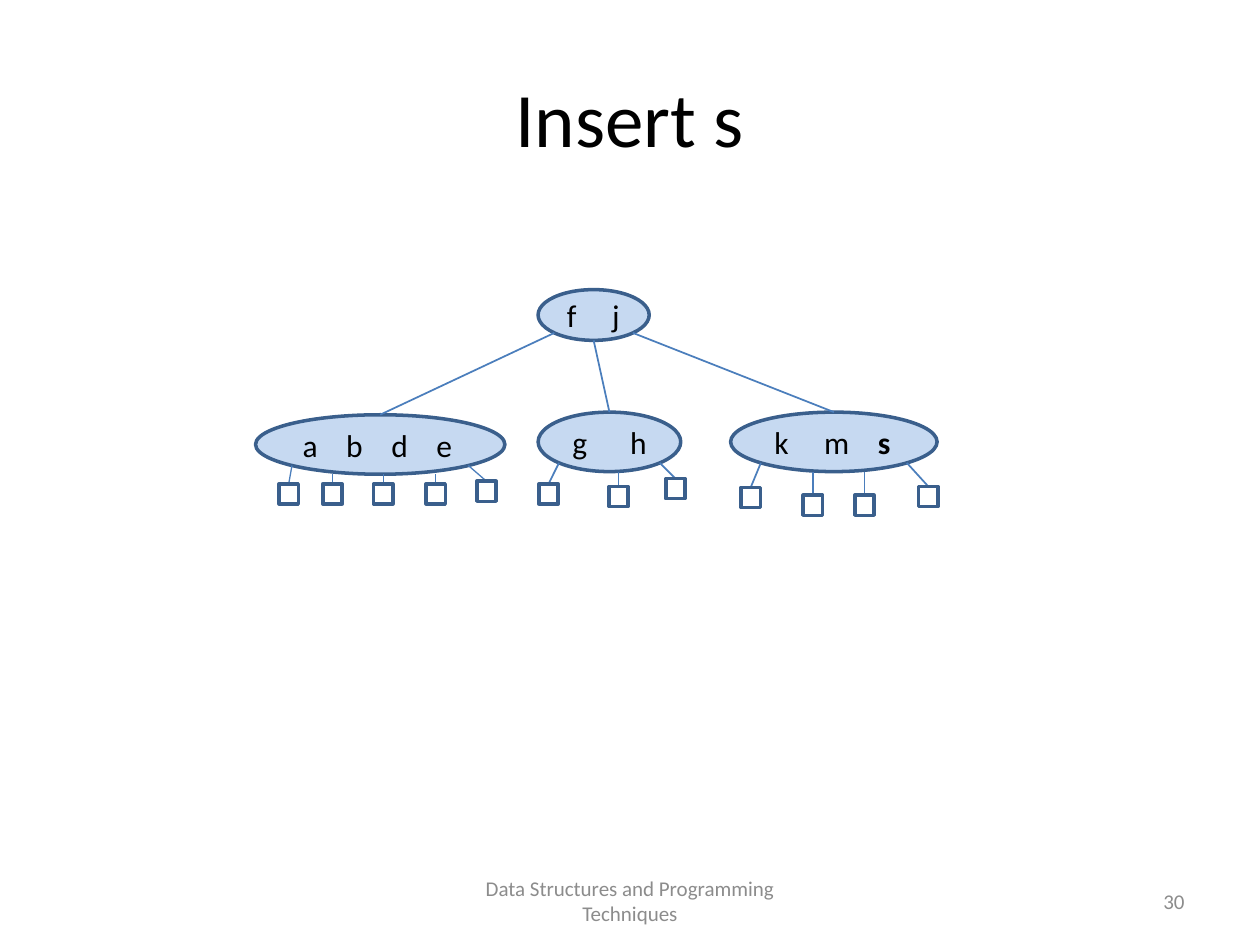
from collections import namedtuple
from dataclasses import dataclass
from math import sqrt

from lxml import etree
from pptx import Presentation
from pptx.dml.color import RGBColor
from pptx.enum.shapes import MSO_CONNECTOR, MSO_SHAPE
from pptx.enum.text import MSO_ANCHOR, PP_ALIGN
from pptx.oxml.ns import qn
from pptx.util import Pt

LEFT, CENTER, RIGHT = PP_ALIGN.LEFT, PP_ALIGN.CENTER, PP_ALIGN.RIGHT
MIDDLE = MSO_ANCHOR.MIDDLE
OVAL, SQUARE = MSO_SHAPE.OVAL, MSO_SHAPE.RECTANGLE
STRAIGHT = MSO_CONNECTOR.STRAIGHT


@dataclass(frozen=True)
class Theme:
    font: str = "Calibri"
    text: str = "000000"
    muted: str = "8C8C8C"
    node_fill: str = "C6D9F1"
    outline: str = "3A5F8C"
    branch: str = "4B7EBC"
    title_size: int = 44
    key_size: int = 18
    footer_size: int = 12
    outline_width: int = 2


THEME = Theme()
LEAF_W, LEAF_H = 11, 11.5
KEY_BOX_H = 29

# keys: (letter, left edge); leaves: (centre x, top); sizes in points
Node = namedtuple("Node", "left top width height keys leaves leaf_line")
ROOT = Node(307.5, 165.5, 63.5, 29, [("f", 324), ("j", 349.8)], [], 1)
CHILDREN = [
    Node(146, 237, 142.5, 34,
         [("a", 172.9), ("b", 197.8), ("d", 223.6), ("e", 249.4)],
         [(165, 276.5), (190, 276.5), (219, 276.5), (249, 276.5), (278, 275)], 0.75),
    Node(307.5, 235.5, 81.5, 34, [("g", 327), ("h", 360)],
         [(313.5, 276.5), (353.5, 278), (386, 273.5)], 1),
    Node(417.5, 235.5, 118, 34, [("k", 442.5), ("m", 471), ("s", 501.7)],
         [(429, 278.5), (464.5, 283), (494, 283), (530.5, 278)], 1),
]
NEW_KEY = "s"


def rgb(value):
    return RGBColor.from_string(value)


def set_font(r, size, color, bold=False):
    formats = {"name": THEME.font, "size": Pt(size), "bold": bold}
    for name, value in formats.items():
        setattr(r.font, name, value)
    r.font.color.rgb = rgb(color)


def set_frame(tf, **formats):
    for name, value in {"word_wrap": True, "vertical_anchor": MIDDLE, **formats}.items():
        setattr(tf, name, value)


def place(sp, left, top, width, height):
    for name, value in dict(left=left, top=top, width=width, height=height).items():
        setattr(sp, name, Pt(value))


def add_title(slide, text):
    sp = slide.shapes.title
    place(sp, 36, 21.6, 648, 90)
    set_frame(sp.text_frame)
    p = sp.text_frame.paragraphs[0]
    p.alignment = CENTER
    r = p.add_run()
    r.text = text
    set_font(r, THEME.title_size, THEME.text)


def add_footer(slide, text, left, width, align):
    sp = slide.shapes.add_textbox(Pt(left), Pt(500.5), Pt(width), Pt(28.75))
    set_frame(sp.text_frame)
    p = sp.text_frame.paragraphs[0]
    p.alignment = align
    r = p.add_run()
    r.text = text
    set_font(r, THEME.footer_size, THEME.muted)


def add_outlined(slide, kind, left, top, width, height, fill=None):
    sp = slide.shapes.add_shape(kind, Pt(left), Pt(top), Pt(width), Pt(height))
    sp.shadow.inherit = False
    if fill:
        sp.fill.solid()
        sp.fill.fore_color.rgb = rgb(fill)
    else:
        sp.fill.background()
    sp.line.color.rgb = rgb(THEME.outline)
    sp.line.width = Pt(THEME.outline_width)


def add_branch(slide, start, end, width):
    line = slide.shapes.add_connector(STRAIGHT, *(Pt(v) for v in (*start, *end)))
    line.line.color.rgb = rgb(THEME.branch)
    line.line.width = Pt(width)
    etree.SubElement(line._element.spPr, qn("a:effectLst"))


def top_point(node):
    return node.left + node.width / 2, node.top


def bottom_point(node):
    return node.left + node.width / 2, node.top + node.height


def rim_point(node, side):
    """Point on the oval 45 degrees below centre; side is -1 left, 1 right."""
    reach = 1 / sqrt(8)
    return (node.left + node.width * (0.5 + side * reach),
            node.top + node.height * (0.5 + reach))


def add_keys(slide, node):
    """Write the keys in one line, each at its own tab stop."""
    top = node.top + (node.height - KEY_BOX_H) / 2
    sp = slide.shapes.add_textbox(Pt(node.left), Pt(top), Pt(node.width), Pt(KEY_BOX_H))
    first_left = node.keys[0][1]
    set_frame(sp.text_frame, margin_left=Pt(first_left - node.left), margin_right=0)
    p = sp.text_frame.paragraphs[0]
    p.alignment = LEFT
    tabs = etree.SubElement(p._p.get_or_add_pPr(), qn("a:tabLst"))
    for i, (key, left) in enumerate(node.keys):
        if i:
            etree.SubElement(tabs, qn("a:tab"), pos=str(Pt(left - first_left)), algn="l")
        r = p.add_run()
        r.text = f"\t{key}" if i else key
        set_font(r, THEME.key_size, THEME.text, bold=key == NEW_KEY)


def add_leaves(slide, node):
    last = len(node.leaves) - 1
    for i, (x, top) in enumerate(node.leaves):
        if i in (0, last):
            start = rim_point(node, 1 if i else -1)
        else:
            start = (x, bottom_point(node)[1])
        add_branch(slide, start, (x, top), node.leaf_line)
        add_outlined(slide, SQUARE, x - LEAF_W / 2, top, LEAF_W, LEAF_H)


def add_node(slide, node):
    add_outlined(slide, OVAL, node.left, node.top, node.width, node.height,
                 THEME.node_fill)
    add_keys(slide, node)
    add_leaves(slide, node)


def main():
    prs = Presentation()
    prs.slide_width, prs.slide_height = Pt(720), Pt(540)
    slide = prs.slides.add_slide(prs.slide_layouts.get_by_name("Title Only"))
    add_title(slide, "Insert s")
    for node in [ROOT, *CHILDREN]:
        add_node(slide, node)
    starts = [rim_point(ROOT, -1), bottom_point(ROOT), rim_point(ROOT, 1)]
    for start, child in zip(starts, CHILDREN):
        add_branch(slide, start, top_point(child), 1)
    add_footer(slide, "Data Structures and Programming Techniques", 246, 228, CENTER)
    add_footer(slide, "30", 516, 168, RIGHT)
    prs.save("out.pptx")


if __name__ == "__main__":
    main()
